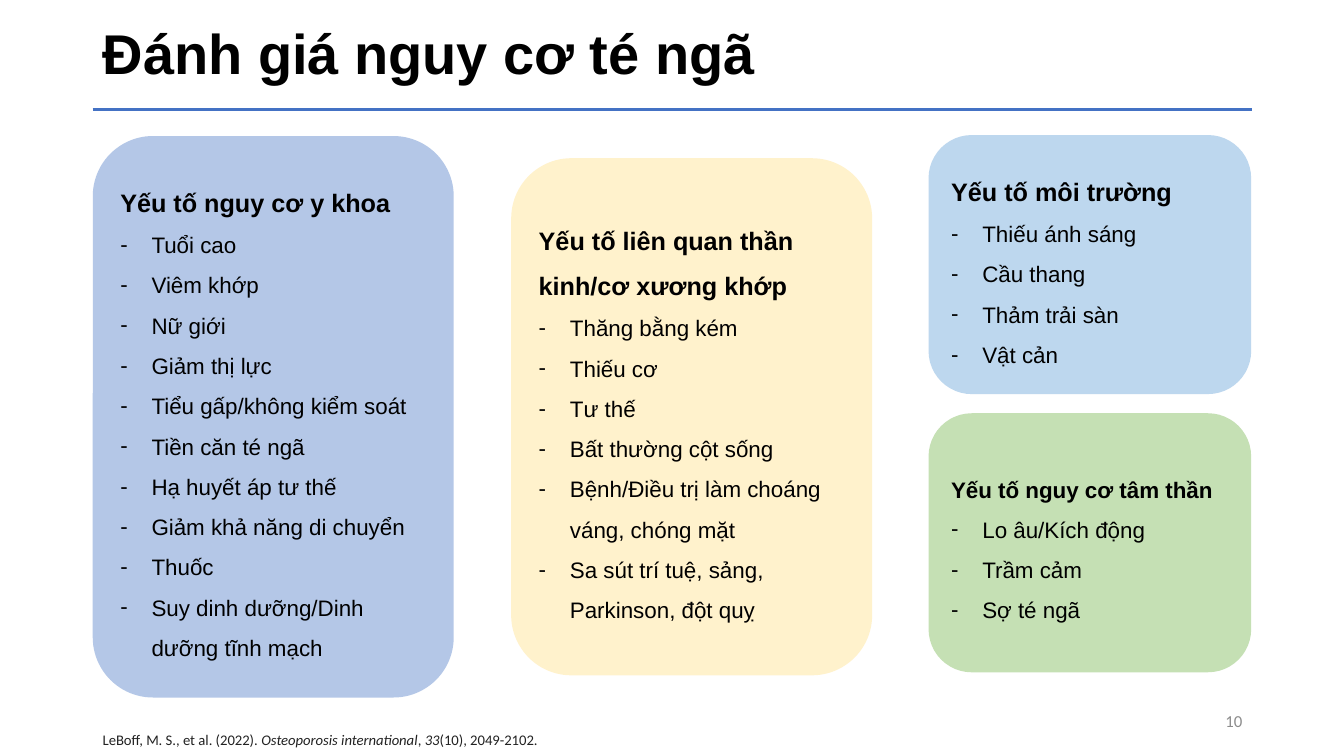
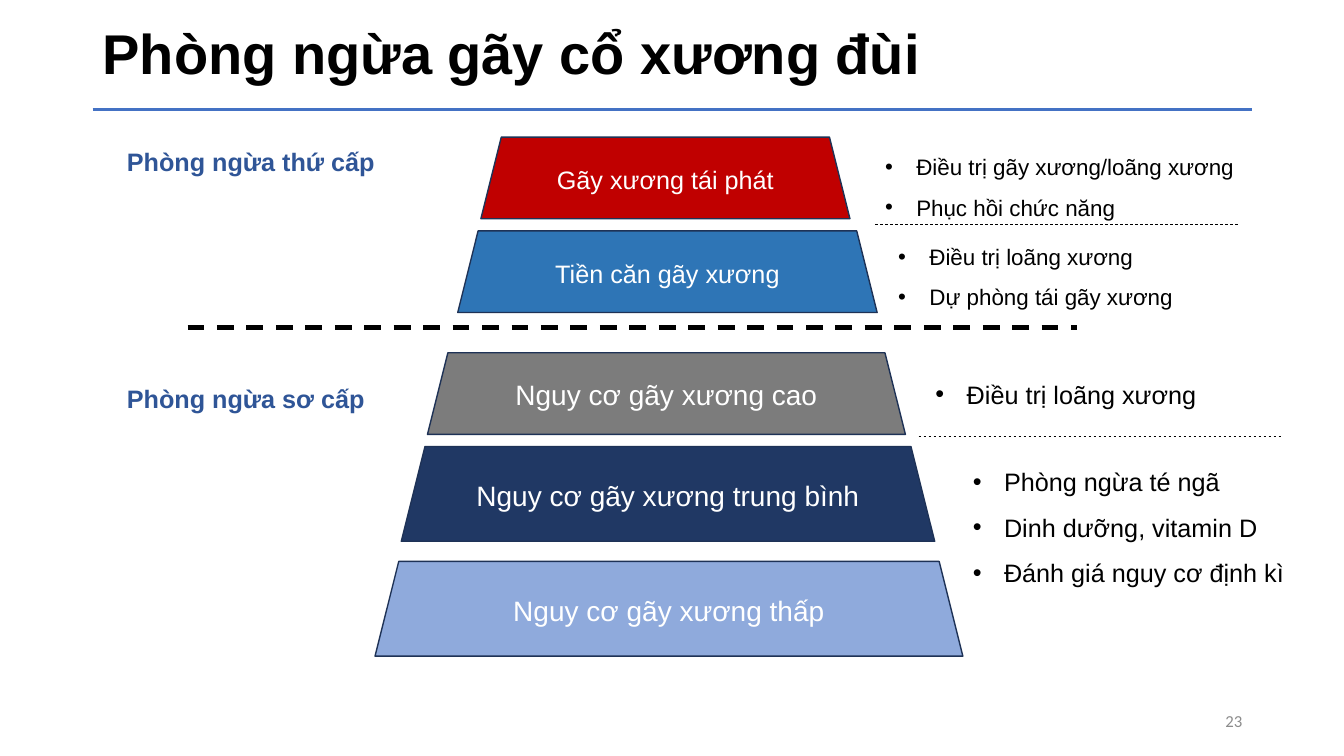
from dataclasses import dataclass

from lxml import etree
from pptx import Presentation
from pptx.dml.color import RGBColor
from pptx.enum.dml import MSO_LINE
from pptx.enum.shapes import MSO_CONNECTOR, MSO_SHAPE
from pptx.enum.text import MSO_ANCHOR, PP_ALIGN
from pptx.oxml.ns import qn
from pptx.util import Inches, Pt

ROUNDED, TRAPEZOID = MSO_SHAPE.ROUNDED_RECTANGLE, MSO_SHAPE.TRAPEZOID
STRAIGHT, DASH = MSO_CONNECTOR.STRAIGHT, MSO_LINE.DASH
TOP, MIDDLE = MSO_ANCHOR.TOP, MSO_ANCHOR.MIDDLE
LEFT, CENTER, RIGHT = PP_ALIGN.LEFT, PP_ALIGN.CENTER, PP_ALIGN.RIGHT

COLORS = {
    "black": "000000", "white": "FFFFFF", "rule": "4472C4",
    "page": "8C8C8C", "citation": "222222", "label": "2F5597",
    "medical": "B4C7E7", "neuro": "FFF2CC",
    "environment": "BDD7EE", "mental": "C5E0B4",
    "outline": "1E3256", "recurrent": "C00000", "history": "2E75B6",
    "high": "7C7C7C", "medium": "203864", "low": "8FAADC",
}
HANGING = Inches(0.31)
MARGIN, CONTENT_WIDTH = 0.92, 11.5

Box = tuple[float, float, float, float]


@dataclass
class Style:
    size: float
    color: str = "black"
    bold: bool = False
    font: str = "Arial"
    align: PP_ALIGN = LEFT
    spacing: float = 1.0
    bullet: str = ""


@dataclass
class Card:
    box: Box
    color: str
    heading: str
    factors: list[str]
    heading_size: int = 18


@dataclass
class Tier:
    box: Box
    color: str
    risk: str
    size: int


@dataclass
class Advice:
    box: Box
    size: int
    measures: list[str]
    spacing: float = 1.5


@dataclass
class Rule:
    left: float
    right: float
    y: float
    width: float
    color: str = "black"
    dashed: bool = True


TITLE = Style(40, bold=True, spacing=0.9)
PAGE = Style(12, "page", font="Calibri", align=RIGHT)
CITATION = Style(10.5, "citation", font="Calibri")
LABEL = Style(18, "label", bold=True)

CARDS = [
    Card((0.92, 1.35, 3.58, 5.57), "medical", "Yếu tố nguy cơ y khoa", [
        "Tuổi cao", "Viêm khớp", "Nữ giới", "Giảm thị lực",
        "Tiểu gấp/không kiểm soát", "Tiền căn té ngã",
        "Hạ huyết áp tư thế", "Giảm khả năng di chuyển", "Thuốc",
        "Suy dinh dưỡng/Dinh dưỡng tĩnh mạch"]),
    Card((5.07, 1.57, 3.58, 5.13), "neuro",
         "Yếu tố liên quan thần kinh/cơ xương khớp", [
             "Thăng bằng kém", "Thiếu cơ", "Tư thế", "Bất thường cột sống",
             "Bệnh/Điều trị làm choáng váng, chóng mặt",
             "Sa sút trí tuệ, sảng, Parkinson, đột quỵ"]),
    Card((9.21, 1.34, 3.2, 2.57), "environment", "Yếu tố môi trường", [
        "Thiếu ánh sáng", "Cầu thang", "Thảm trải sàn", "Vật cản"]),
    Card((9.21, 4.1, 3.2, 2.57), "mental", "Yếu tố nguy cơ tâm thần", [
        "Lo âu/Kích động", "Trầm cảm", "Sợ té ngã"], 16),
]
# Citation pieces with their italic flag
SOURCE = [
    ("LeBoff, M. S., et al. (2022). ", False),
    ("Osteoporosis international", True), (", ", False),
    ("33", True), ("(10), 2049-2102.", False),
]
TIERS = [
    Tier((3.72, 5.57, 5.83, 0.94), "low", "Nguy cơ gãy xương thấp", 20),
    Tier((3.98, 4.43, 5.29, 0.94), "medium", "Nguy cơ gãy xương trung bình", 20),
    Tier((4.24, 3.5, 4.74, 0.81), "high", "Nguy cơ gãy xương cao", 20),
    Tier((4.54, 2.29, 4.16, 0.81), "history", "Tiền căn gãy xương", 18),
    Tier((4.77, 1.36, 3.66, 0.81), "recurrent", "Gãy xương tái phát", 18),
]
STAGES = {"Phòng ngừa sơ cấp": 3.75, "Phòng ngừa thứ cấp": 1.4}
ADVICE = [
    Advice((9.55, 4.43, 3.44, 1.41), 18, [
        "Phòng ngừa té ngã", "Dinh dưỡng, vitamin D",
        "Đánh giá nguy cơ định kì"]),
    Advice((9.18, 3.71, 3.48, 0.4), 18, ["Điều trị loãng xương"], 1.0),
    Advice((8.81, 2.23, 3.48, 0.86), 16, [
        "Điều trị loãng xương", "Dự phòng tái gãy xương"]),
    Advice((8.68, 1.34, 4.16, 0.86), 16, [
        "Điều trị gãy xương/loãng xương", "Phục hồi chức năng"]),
]
TITLE_RULE = Rule(MARGIN, MARGIN + CONTENT_WIDTH, 1.09, 2.25, "rule", False)
DIVIDERS = [
    Rule(1.86, 10.68, 3.25, 3),
    Rule(8.68, 12.29, 2.23, 0.5),
    Rule(9.11, 12.72, 4.33, 0.5),
]


def rgb(name: str) -> RGBColor:
    return RGBColor.from_string(COLORS[name])


def add_run(paragraph, text: str, style: Style, italic: bool = False) -> None:
    run = paragraph.add_run()
    run.text = text
    formats = {"name": style.font, "size": Pt(style.size),
               "bold": style.bold, "italic": italic}
    for attribute, value in formats.items():
        setattr(run.font, attribute, value)
    run.font.color.rgb = rgb(style.color)


def format_paragraph(paragraph, style: Style) -> None:
    paragraph.alignment = style.align
    paragraph.line_spacing = style.spacing
    if style.bullet:
        properties = paragraph._p.get_or_add_pPr()
        properties.set("marL", str(HANGING))
        properties.set("indent", str(-HANGING))
        etree.SubElement(properties, qn("a:buFont")).set("typeface", "Arial")
        etree.SubElement(properties, qn("a:buChar")).set("char", style.bullet)


def write(shape, lines: list[tuple[str, Style]], anchor=MIDDLE) -> None:
    frame = shape.text_frame
    frame.word_wrap = True
    frame.vertical_anchor = anchor
    for index, (text, style) in enumerate(lines):
        paragraph = frame.add_paragraph() if index else frame.paragraphs[0]
        format_paragraph(paragraph, style)
        add_run(paragraph, text, style)


def add_text(slide, box: Box, lines: list[tuple[str, Style]], anchor=TOP):
    area = slide.shapes.add_textbox(*map(Inches, box))
    write(area, lines, anchor)
    return area


def add_panel(slide, preset, box: Box, color: str, outline: str = ""):
    panel = slide.shapes.add_shape(preset, *map(Inches, box))
    panel.shadow.inherit = False
    panel.fill.solid()
    panel.fill.fore_color.rgb = rgb(color)
    if outline:
        panel.line.color.rgb = rgb(outline)
        panel.line.width = Pt(1)
    else:
        panel.line.fill.background()
    return panel


def add_rule(slide, rule: Rule) -> None:
    ends = map(Inches, (rule.left, rule.y, rule.right, rule.y))
    stroke = slide.shapes.add_connector(STRAIGHT, *ends)
    stroke.line.color.rgb = rgb(rule.color)
    stroke.line.width = Pt(rule.width)
    if rule.dashed:
        stroke.line.dash_style = DASH
    etree.SubElement(stroke._element.spPr, qn("a:effectLst"))


def start_slide(deck, title: str, page: int):
    """Add a blank slide with the shared title, rule and page number."""
    slide = deck.slides.add_slide(deck.slide_layouts[6])
    add_rule(slide, TITLE_RULE)
    add_text(slide, (MARGIN, 0.02, CONTENT_WIDTH, 1.07), [(title, TITLE)], MIDDLE)
    add_text(slide, (9.42, 6.95, 3, 0.4), [(str(page), PAGE)], MIDDLE)
    return slide


def build_fall_risk(deck) -> None:
    slide = start_slide(deck, "Đánh giá nguy cơ té ngã", 10)
    # Risk factor cards
    factor_style = Style(16, spacing=1.5, bullet="-")
    for card in CARDS:
        heading_style = Style(card.heading_size, bold=True, spacing=1.5)
        panel = add_panel(slide, ROUNDED, card.box, card.color)
        write(panel, [(card.heading, heading_style)]
              + [(factor, factor_style) for factor in card.factors])
    # Citation
    citation = add_text(slide, (MARGIN, 7.2, CONTENT_WIDTH, 0.28), [])
    for text, italic in SOURCE:
        add_run(citation.text_frame.paragraphs[0], text, CITATION, italic)


def build_prevention(deck) -> None:
    slide = start_slide(deck, "Phòng ngừa gãy cổ xương đùi", 23)
    # Pyramid of risk levels
    for tier in TIERS:
        level = add_panel(slide, TRAPEZOID, tier.box, tier.color, "outline")
        write(level, [(tier.risk, Style(tier.size, "white", align=CENTER))])
    # Prevention stages
    for stage, top in STAGES.items():
        add_text(slide, (1.16, top, 2.82, 0.4), [(stage, LABEL)])
    # Measures beside each level
    for advice in ADVICE:
        style = Style(advice.size, spacing=advice.spacing, bullet="•")
        add_text(slide, advice.box, [(measure, style) for measure in advice.measures])
    # Dashed dividers
    for divider in DIVIDERS:
        add_rule(slide, divider)


def main() -> None:
    deck = Presentation()
    deck.slide_width, deck.slide_height = Inches(13.33), Inches(7.5)
    build_fall_risk(deck)
    build_prevention(deck)
    deck.save("out.pptx")


if __name__ == "__main__":
    main()
